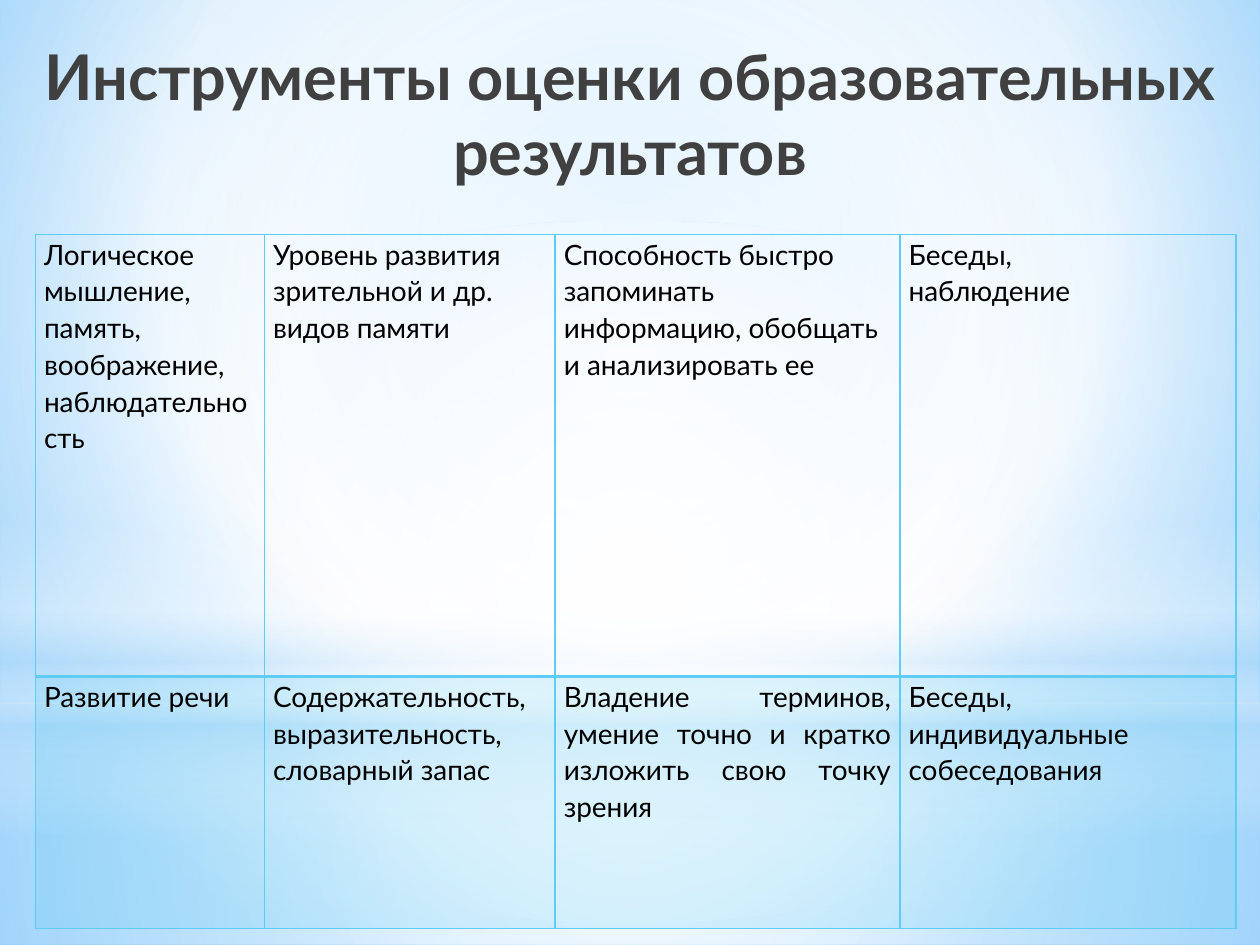
from dataclasses import dataclass

from pptx import Presentation
from pptx.dml.color import RGBColor as RGB
from pptx.enum.shapes import MSO_SHAPE as SHAPE
from pptx.enum.text import MSO_ANCHOR as ANCHOR, MSO_AUTO_SIZE as FIT, PP_ALIGN as ALIGN
from pptx.oxml import parse_xml
from pptx.oxml.ns import nsdecls, qn
from pptx.util import Emu, Inches, Pt


@dataclass(frozen=True)
class Theme:
    """Colours, font and type sizes of the slide."""
    font: str = "Lato"
    title: str = "404040"
    text: str = "000000"
    accent: str = "5ECCF3"
    white: str = "FFFFFF"
    haze: str = "B4DCFA"
    sky: str = "9ED5FF"
    deep: str = "5BB9FF"
    title_size: int = 36
    text_size: int = 16


T = Theme()
J, L = ALIGN.JUSTIFY, ALIGN.LEFT
CENTRE = (50, 50, 50, 50)
TITLE = "Инструменты оценки образовательных результатов"
COLUMNS = (1.82, 2.31, 2.74, 2.67)
ROWS = (3.51, 2)
CELLS = (
    (
        ((J, "Логическое мышление,"), (J, "память, воображение, наблюдательность")),
        ((J, "Уровень развития"), (J, "зрительной и др."), (J, "видов памяти")),
        ((L, "Способность быстро запоминать информацию, обобщать и анализировать ее"),),
        ((L, "Беседы,"), (J, "наблюдение")),
    ),
    (
        ((J, "Развитие речи"),),
        ((J, "Содержательность,"), (J, "выразительность,"), (J, "словарный запас")),
        ((J, "Владение терминов, умение точно и кратко изложить свою точку зрения"),),
        ((L, "Беседы,"), (L, "индивидуальные"), (L, "собеседования")),
    ),
)


def colour_xml(colour, alpha=100):
    """Return the XML of a colour with its opacity in percent."""
    return f'<a:srgbClr val="{colour}"><a:alpha val="{alpha * 1000}"/></a:srgbClr>'


def paint(fill, parent, body, tag="gradFill"):
    """Give an object a fill built from XML."""
    fill.background()
    xml = f'<a:{tag} {nsdecls("a")}>{body}</a:{tag}>'
    parent.replace(parent.find(qn("a:noFill")), parse_xml(xml))


def gradient(stops, focus=None):
    """Return gradient stops running out from a focus, or downwards without one."""
    marks = "".join(f'<a:gs pos="{at * 1000}">{colour_xml(*c)}</a:gs>' for at, *c in stops)
    way = '<a:lin ang="5400000" scaled="0"/>'
    if focus:
        sides = " ".join(f'{k}="{v * 1000}"' for k, v in zip("ltrb", focus))
        way = f'<a:path path="circle"><a:fillToRect {sides}/></a:path>'
    return f"<a:gsLst>{marks}</a:gsLst>{way}"


def style(obj, **values):
    """Set attributes from format values."""
    for name, value in values.items():
        setattr(obj, name, value)


def write(p, text, align, size, colour, **font):
    """Write one formatted run into a paragraph."""
    p.alignment = align
    r = p.add_run()
    r.text = text
    style(r.font, name=T.font, size=Pt(size), **font)
    r.font.color.rgb = RGB.from_string(colour)


def add_backdrop(s, width, height):
    """Paint the background and its layers of light over the given area."""
    fill = s.background.fill
    fill.background()
    paint(fill, s._element.find(".//" + qn("p:bgPr")),
          gradient(((0, T.sky), (60, T.white), (100, T.deep)), (20, 10, 20, 60)))
    horizon = 0.744
    layers = (
        (SHAPE.RECTANGLE, horizon, 1 - horizon,
         ((0, T.white, 91), (37, T.white, 76), (100, T.haze, 79)), CENTRE),
        (SHAPE.RECTANGLE, 0, horizon,
         ((0, T.white, 89), (48, T.white, 62), (100, T.haze, 79)), CENTRE),
        (SHAPE.RECTANGLE, 0.55, 0.333,
         ((0, T.white, 0), (29, T.white, 30), (45, T.haze, 40), (55, T.white, 26),
          (65, T.haze, 60), (100, T.white, 0)), None),
        (SHAPE.OVAL, 0.233, horizon, ((0, T.white), (56, T.white, 0)), CENTRE),
    )
    for kind, top, share, stops, focus in layers:
        sp = s.shapes.add_shape(kind, 0, Emu(int(height * top)), width, Emu(int(height * share)))
        sp.shadow.inherit = False
        sp.line.fill.background()
        paint(sp.fill, sp._element.spPr, gradient(stops, focus))


def add_title(s, left, top, width, height):
    """Place the title placeholder above the backdrop."""
    sp = s.shapes.title
    s.shapes._spTree.append(sp._element)
    style(sp, left=left, top=top, width=width, height=height)
    tf = sp.text_frame
    style(tf, word_wrap=True, auto_size=FIT.NONE, vertical_anchor=ANCHOR.MIDDLE)
    write(tf.paragraphs[0], TITLE, ALIGN.CENTER, T.title_size, T.title, bold=True)


def add_borders(cell, bottom):
    """Draw the four borders of a cell."""
    tc = cell._tc.get_or_add_tcPr()
    for i, (side, points) in enumerate(zip("LRTB", (1, 1, 1, bottom))):
        tc.insert(i, parse_xml(
            f'<a:ln{side} {nsdecls("a")} w="{Pt(points)}">'
            f"<a:solidFill>{colour_xml(T.accent)}</a:solidFill></a:ln{side}>"))


def fill_cell(cell, lines, last):
    """Format one cell and write its paragraphs; the last row is tinted."""
    style(cell, margin_left=Inches(0.07), margin_right=Inches(0.07),
          margin_top=0, margin_bottom=0)
    cell.fill.background()
    if last:
        paint(cell.fill, cell._tc.tcPr, colour_xml(T.accent, 20), "solidFill")
    add_borders(cell, 1 if last else 2)
    tf = cell.text_frame
    for i, (align, text) in enumerate(lines):
        p = tf.add_paragraph() if i else tf.paragraphs[0]
        p.line_spacing = 1.1
        write(p, text, align, T.text_size, T.text)


def add_criteria(s, left, top, width, height):
    """Build the table of skills, indicators and methods in the given box."""
    table = s.shapes.add_table(len(ROWS), len(COLUMNS), left, top, width, height).table
    style(table, first_row=False, horz_banding=False)
    for column, share in zip(table.columns, COLUMNS):
        column.width = Emu(int(width * share / sum(COLUMNS)))
    for row, share, cells in zip(table.rows, ROWS, CELLS):
        row.height = Emu(int(height * share / sum(ROWS)))
        for cell, lines in zip(row.cells, cells):
            fill_cell(cell, lines, cells is CELLS[-1])


def main():
    """Build and save the slide."""
    prs = Presentation()
    style(prs, slide_width=Inches(10), slide_height=Inches(7.5))
    s = prs.slides.add_slide(prs.slide_layouts[5])
    add_backdrop(s, prs.slide_width, prs.slide_height)
    add_title(s, 0, Inches(0.2), prs.slide_width, Inches(1.39))
    add_criteria(s, Inches(0.28), Inches(1.86), Inches(9.53), Inches(5.51))
    prs.save("out.pptx")


if __name__ == "__main__":
    main()
